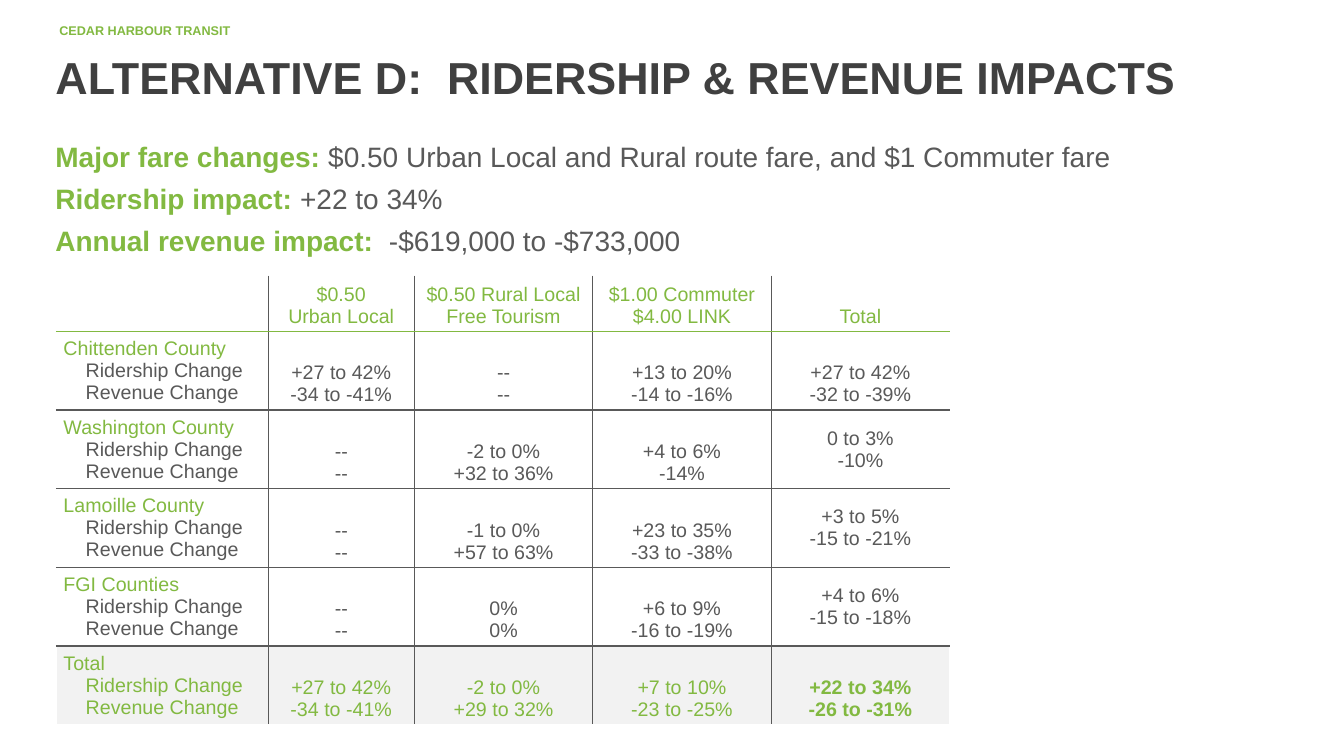
from lxml.etree import SubElement
from pptx import Presentation
from pptx.dml.color import RGBColor
from pptx.enum.text import MSO_ANCHOR, PP_ALIGN
from pptx.oxml.ns import qn
from pptx.util import Inches, Pt

GREEN = RGBColor(0x82, 0xB9, 0x41)
CHARCOAL = RGBColor(0x40, 0x40, 0x40)
GREY = RGBColor(0x59, 0x59, 0x59)
PALE = RGBColor(0xF2, 0xF2, 0xF2)
WHITE = RGBColor(0xFF, 0xFF, 0xFF)

FONT = "Arial"
SLIDE_SIZE = Inches(13.33), Inches(7.5)
MARGIN = Inches(0.45)
CONTENT_WIDTH = Inches(12.21)
COLUMNS = [Inches(2.1), Inches(1.45)] + [Inches(1.77)] * 3
ROWS = [Inches(0.42)] + [Inches(0.6)] * 5

SUMMARY = [
    ("Major fare changes:", " $0.50 Urban Local and Rural route fare, and $1 Commuter fare"),
    ("Ridership impact:", " +22 to 34%"),
    ("Annual revenue impact:", "  -$619,000 to -$733,000"),
]
FARES = [
    ["$0.50", "Urban Local"],
    ["$0.50 Rural Local", "Free Tourism"],
    ["$1.00 Commuter", "$4.00 LINK"],
    ["Total"],
]
NONE = ["--", "--"]
IMPACTS = {
    "Chittenden County": [["+27 to 42%", "-34 to -41%"], NONE,
                          ["+13 to 20%", "-14 to -16%"], ["+27 to 42%", "-32 to -39%"]],
    "Washington County": [NONE, ["-2 to 0%", "+32 to 36%"],
                          ["+4 to 6%", "-14%"], ["0 to 3%", "-10%"]],
    "Lamoille County": [NONE, ["-1 to 0%", "+57 to 63%"],
                        ["+23 to 35%", "-33 to -38%"], ["+3 to 5%", "-15 to -21%"]],
    "FGI Counties": [NONE, ["0%", "0%"],
                     ["+6 to 9%", "-16 to -19%"], ["+4 to 6%", "-15 to -18%"]],
    "Total": [["+27 to 42%", "-34 to -41%"], ["-2 to 0%", "+29 to 32%"],
              ["+7 to 10%", "-23 to -25%"], ["+22 to 34%", "-26 to -31%"]],
}
MEASURES = ["Ridership Change", "Revenue Change"]
CENTRED_TOTALS = ("Washington County", "Lamoille County", "FGI Counties")


def style(font, size, color, bold=False):
    font.name = FONT
    font.size = Pt(size)
    font.bold = bold
    font.color.rgb = color


def add_text_frame(slide, left, top, width, height):
    frame = slide.shapes.add_textbox(left, top, width, height).text_frame
    frame.word_wrap = True
    return frame


def add_agency(slide):
    agency = add_text_frame(slide, Inches(0.49), Inches(0.18), Inches(9.46), Inches(0.25))
    agency.text = "CEDAR HARBOUR TRANSIT"
    style(agency.paragraphs[0].font, 9, GREEN, True)


def add_title(slide):
    title = slide.shapes.title
    title.left, title.top = MARGIN, Inches(0.36)
    title.width, title.height = CONTENT_WIDTH, Inches(0.8)
    title.text = "ALTERNATIVE D:  RIDERSHIP & REVENUE IMPACTS"
    title.text_frame.vertical_anchor = MSO_ANCHOR.MIDDLE
    heading = title.text_frame.paragraphs[0]
    heading.alignment = PP_ALIGN.LEFT
    style(heading.font, 32, CHARCOAL, True)


def add_summary(slide):
    frame = add_text_frame(slide, MARGIN, Inches(1.33), CONTENT_WIDTH, Inches(1.35))
    for index, (label, finding) in enumerate(SUMMARY):
        line = frame.paragraphs[0] if index == 0 else frame.add_paragraph()
        line.space_before = Pt(6)
        for words, color, bold in ((label, GREEN, True), (finding, GREY, False)):
            run = line.add_run()
            run.text = words
            style(run.font, 20, color, bold)


def draw_borders(cell, row, column):
    last_row, last_column = len(ROWS) - 1, len(COLUMNS) - 1
    borders = {
        "a:lnL": WHITE if column == 0 else GREY,
        "a:lnR": WHITE if column == last_column else GREY,
        "a:lnT": {0: WHITE, 1: GREEN}.get(row, GREY),
        "a:lnB": {0: GREEN, last_row: WHITE}.get(row, GREY),
    }
    properties = cell._tc.get_or_add_tcPr()
    for side, color in borders.items():
        line = SubElement(properties, qn(side), w=str(Pt(1)))
        fill = SubElement(line, qn("a:solidFill"))
        SubElement(fill, qn("a:srgbClr"), val=str(color))


def fill_cell(cell, lines, colors, anchor, alignment, bold=False):
    cell.margin_left = cell.margin_right = Inches(0.07)
    cell.margin_top = cell.margin_bottom = Inches(0.04)
    cell.vertical_anchor = anchor
    cell.text = "\n".join(lines)
    for paragraph, color in zip(cell.text_frame.paragraphs, colors):
        paragraph.alignment = alignment
        style(paragraph.font, 14, color, bold)
        SubElement(paragraph._p, qn("a:endParaRPr"), sz="1400")


def fill_county(table, row, county, impacts):
    is_total = row == len(ROWS) - 1
    color = GREEN if is_total else GREY
    label = table.cell(row, 0)
    fill_cell(label, [county] + MEASURES, [GREEN, color, color],
              MSO_ANCHOR.MIDDLE, PP_ALIGN.LEFT)
    for measure in label.text_frame.paragraphs[1:]:
        measure._p.get_or_add_pPr().set("marL", str(Inches(0.22)))
    for column, changes in enumerate(impacts, 1):
        in_total_column = column == len(COLUMNS) - 1
        centred = in_total_column and county in CENTRED_TOTALS
        fill_cell(table.cell(row, column), changes, [color] * 2,
                  MSO_ANCHOR.MIDDLE if centred else MSO_ANCHOR.BOTTOM,
                  PP_ALIGN.CENTER, is_total and in_total_column)


def add_impacts(slide):
    table = slide.shapes.add_table(len(ROWS), len(COLUMNS), Inches(0.56), Inches(2.74),
                                   sum(COLUMNS), sum(ROWS)).table
    table.first_row = table.horz_banding = False
    for column, width in zip(table.columns, COLUMNS):
        column.width = width
    for row, height in zip(table.rows, ROWS):
        row.height = height
    for row in range(len(ROWS)):
        for column in range(len(COLUMNS)):
            cell = table.cell(row, column)
            draw_borders(cell, row, column)
            cell.fill.solid()
            cell.fill.fore_color.rgb = PALE if row == len(ROWS) - 1 else WHITE
    for column, fare in enumerate(FARES, 1):
        fill_cell(table.cell(0, column), fare, [GREEN] * 2,
                  MSO_ANCHOR.BOTTOM, PP_ALIGN.CENTER)
    for row, (county, impacts) in enumerate(IMPACTS.items(), 1):
        fill_county(table, row, county, impacts)


def main():
    presentation = Presentation()
    presentation.slide_width, presentation.slide_height = SLIDE_SIZE
    slide = presentation.slides.add_slide(presentation.slide_layouts[5])
    add_agency(slide)
    add_title(slide)
    add_summary(slide)
    add_impacts(slide)
    presentation.save("out.pptx")


if __name__ == "__main__":
    main()
